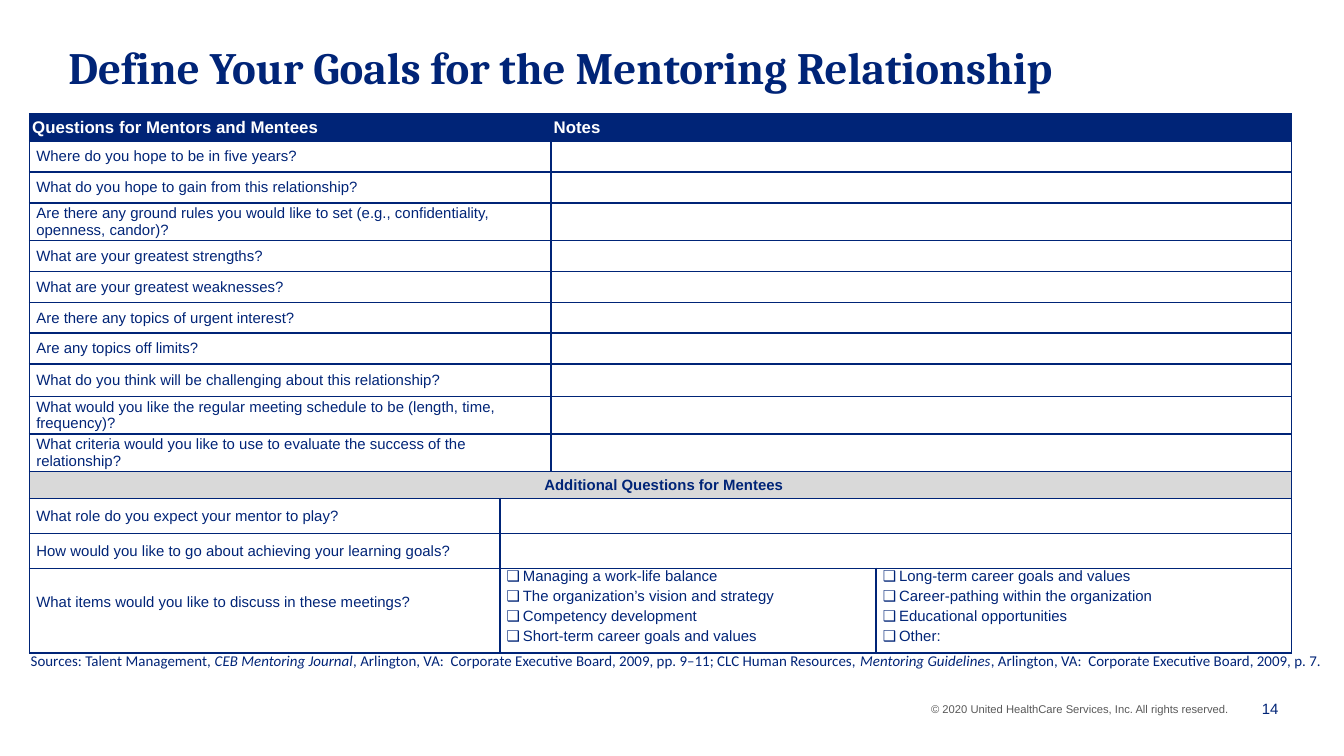
from lxml import etree
from pptx import Presentation
from pptx.dml.color import RGBColor
from pptx.enum.text import MSO_ANCHOR, PP_ALIGN
from pptx.oxml.ns import qn
from pptx.util import Inches, Pt

NAVY = RGBColor(0x00, 0x24, 0x77)
GRAY = RGBColor(0xD9, 0xD9, 0xD9)
DARK_GRAY = RGBColor(0x59, 0x59, 0x59)
WHITE = RGBColor(0xFF, 0xFF, 0xFF)
LEFT, CENTER, RIGHT = PP_ALIGN.LEFT, PP_ALIGN.CENTER, PP_ALIGN.RIGHT
TOP, MIDDLE = MSO_ANCHOR.TOP, MSO_ANCHOR.MIDDLE

TITLE = "Define Your Goals for the Mentoring Relationship"
HEADERS = ("Questions for Mentors and Mentees", "Notes")
# Question and row height
SHARED_QUESTIONS = [
    ("Where do you hope to be in five years?", 0.23),
    ("What do you hope to gain from this relationship?", 0.23),
    ("Are there any ground rules you would like to set (e.g., confidentiality, "
     "openness, candor)?", 0.28),
    ("What are your greatest strengths?", 0.23),
    ("What are your greatest weaknesses?", 0.23),
    ("Are there any topics of urgent interest?", 0.23),
    ("Are any topics off limits?", 0.23),
    ("What do you think will be challenging about this relationship?", 0.24),
    ("What would you like the regular meeting schedule to be (length, time, "
     "frequency)?", 0.28),
    ("What criteria would you like to use to evaluate the success of the "
     "relationship?", 0.28),
]
MENTEE_HEADING = "Additional Questions for Mentees"
MENTEE_QUESTIONS = [
    ("What role do you expect your mentor to play?", 0.26),
    ("How would you like to go about achieving your learning goals?", 0.26),
]
TOPICS_QUESTION = "What items would you like to discuss in these meetings?"
TOPICS = [
    ["Managing a work-life balance", "The organization’s vision and strategy",
     "Competency development", "Short-term career goals and values"],
    ["Long-term career goals and values", "Career-pathing within the organization",
     "Educational opportunities", "Other:"],
]
# Text and whether it is italic
SOURCES = [
    ("Sources: Talent Management, ", False),
    ("CEB Mentoring Journal", True),
    (", Arlington, VA:  Corporate Executive Board, 2009, pp. 9–11; "
     "CLC Human Resources, ", False),
    ("Mentoring Guidelines", True),
    (", Arlington, VA:  Corporate Executive Board, 2009, p. 7.", False),
]
COPYRIGHT = "© 2020 United HealthCare Services, Inc. All rights reserved."
COL_WIDTHS = (3.5, 0.38, 2.42, 3.09)
HEADING_HEIGHT, TOPICS_HEIGHT = 0.2, 0.63


def style(run, size, color=NAVY, bold=False, italic=False, name="Arial"):
    font = run.font
    font.name, font.size, font.bold, font.italic = name, Pt(size), bold, italic
    font.color.rgb = color


def set_margins(box, left, top, right, bottom):
    box.margin_left, box.margin_top = Inches(left), Inches(top)
    box.margin_right, box.margin_bottom = Inches(right), Inches(bottom)


def add_text(s, at, runs, size, align=LEFT, anchor=TOP, margins=(0.1, 0.05, 0.1, 0.05),
             **look):
    """Add a one-paragraph text box from (text, italic) runs."""
    tf = s.shapes.add_textbox(*(Inches(v) for v in at)).text_frame
    tf.word_wrap = True
    tf.vertical_anchor = anchor
    set_margins(tf, *margins)
    p = tf.paragraphs[0]
    p.alignment = align
    for text, italic in runs:
        r = p.add_run()
        r.text = text
        style(r, size, italic=italic, **look)


def set_borders(cell):
    tcPr = cell._tc.get_or_add_tcPr()
    for i, side in enumerate(("lnL", "lnR", "lnT", "lnB")):
        ln = etree.Element(qn("a:" + side), w=str(Pt(1)))
        fill = etree.SubElement(ln, qn("a:solidFill"))
        etree.SubElement(fill, qn("a:srgbClr"), val=str(NAVY))
        tcPr.insert(i, ln)


def prepare(cell):
    """Clear the default look and keep an empty cell from growing its row."""
    cell.fill.background()
    set_borders(cell)
    set_margins(cell, 0.05, 0, 0, 0)
    cell.vertical_anchor = MIDDLE
    end = etree.SubElement(cell.text_frame.paragraphs[0]._p, qn("a:endParaRPr"))
    end.set("sz", "800")


def fill_cell(cell, text, size=8, color=NAVY, bold=False, fill=None, align=LEFT):
    p = cell.text_frame.paragraphs[0]
    p.alignment = align
    r = p.add_run()
    r.text = text
    style(r, size, color, bold)
    if fill is not None:
        cell.fill.solid()
        cell.fill.fore_color.rgb = fill


def fill_checklist(cell, items):
    cell.vertical_anchor = TOP
    tf = cell.text_frame
    for i, item in enumerate(items):
        p = tf.add_paragraph() if i else tf.paragraphs[0]
        pPr = p._p.get_or_add_pPr()
        pPr.set("marL", str(Inches(0.12)))
        pPr.set("indent", str(-Inches(0.12)))
        etree.SubElement(pPr, qn("a:buFont"), typeface="Arial")
        etree.SubElement(pPr, qn("a:buChar"), char="❑")
        if i:
            p.space_before = Pt(1.6)
        r = p.add_run()
        r.text = item
        style(r, 8)


def add_questions(s):
    heights = [HEADING_HEIGHT, *(h for _, h in SHARED_QUESTIONS), HEADING_HEIGHT,
               *(h for _, h in MENTEE_QUESTIONS), TOPICS_HEIGHT]
    table = s.shapes.add_table(len(heights), len(COL_WIDTHS), Inches(0.22), Inches(0.85),
                               Inches(sum(COL_WIDTHS)), Inches(sum(heights))).table
    for col, width in zip(table.columns, COL_WIDTHS):
        col.width = Inches(width)
    for row, height in zip(table.rows, heights):
        row.height = Inches(height)
    for cell in table.iter_cells():
        prepare(cell)

    def merge(row, first, last):
        table.cell(row, first).merge(table.cell(row, last))

    heading_row = len(SHARED_QUESTIONS) + 1
    topics_row = len(heights) - 1
    for row in range(heading_row):
        merge(row, 0, 1)
        merge(row, 2, 3)
    merge(heading_row, 0, 3)
    for row in range(heading_row + 1, topics_row):
        merge(row, 1, 3)
    merge(topics_row, 1, 2)

    for col, text in zip((0, 2), HEADERS):
        cell = table.cell(0, col)
        set_margins(cell, 0.02, 0.02, 0.02, 0.02)
        fill_cell(cell, text, 9, WHITE, True, NAVY)
    for row, (text, _) in enumerate(SHARED_QUESTIONS, 1):
        fill_cell(table.cell(row, 0), text)
    fill_cell(table.cell(heading_row, 0), MENTEE_HEADING, bold=True, fill=GRAY, align=CENTER)
    for row, (text, _) in enumerate(MENTEE_QUESTIONS, heading_row + 1):
        fill_cell(table.cell(row, 0), text)
    topics_cell = table.cell(topics_row, 0)
    topics_cell.margin_bottom = Inches(0.12)
    fill_cell(topics_cell, TOPICS_QUESTION)
    for col, items in zip((1, 3), TOPICS):
        fill_checklist(table.cell(topics_row, col), items)


def main():
    prs = Presentation()
    prs.slide_width = Inches(10)
    prs.slide_height = prs.slide_width * 9 // 16
    s = prs.slides.add_slide(prs.slide_layouts[6])
    add_text(s, (6.83, 5.18, 2.58, 0.2), [(COPYRIGHT, False)], 6, color=DARK_GRAY)
    add_text(s, (0.41, 0.25, 9.09, 0.6), [(TITLE, False)], 24, bold=True, name="Cambria")
    add_text(s, (9.22, 5.12, 0.39, 0.31), [("14", False)], 8, RIGHT, MIDDLE)
    add_questions(s)
    add_text(s, (0.13, 4.85, 9.87, 0.13), SOURCES, 8, margins=(0.1, 0, 0.1, 0),
             name="Calibri")
    prs.save("out.pptx")


if __name__ == "__main__":
    main()
